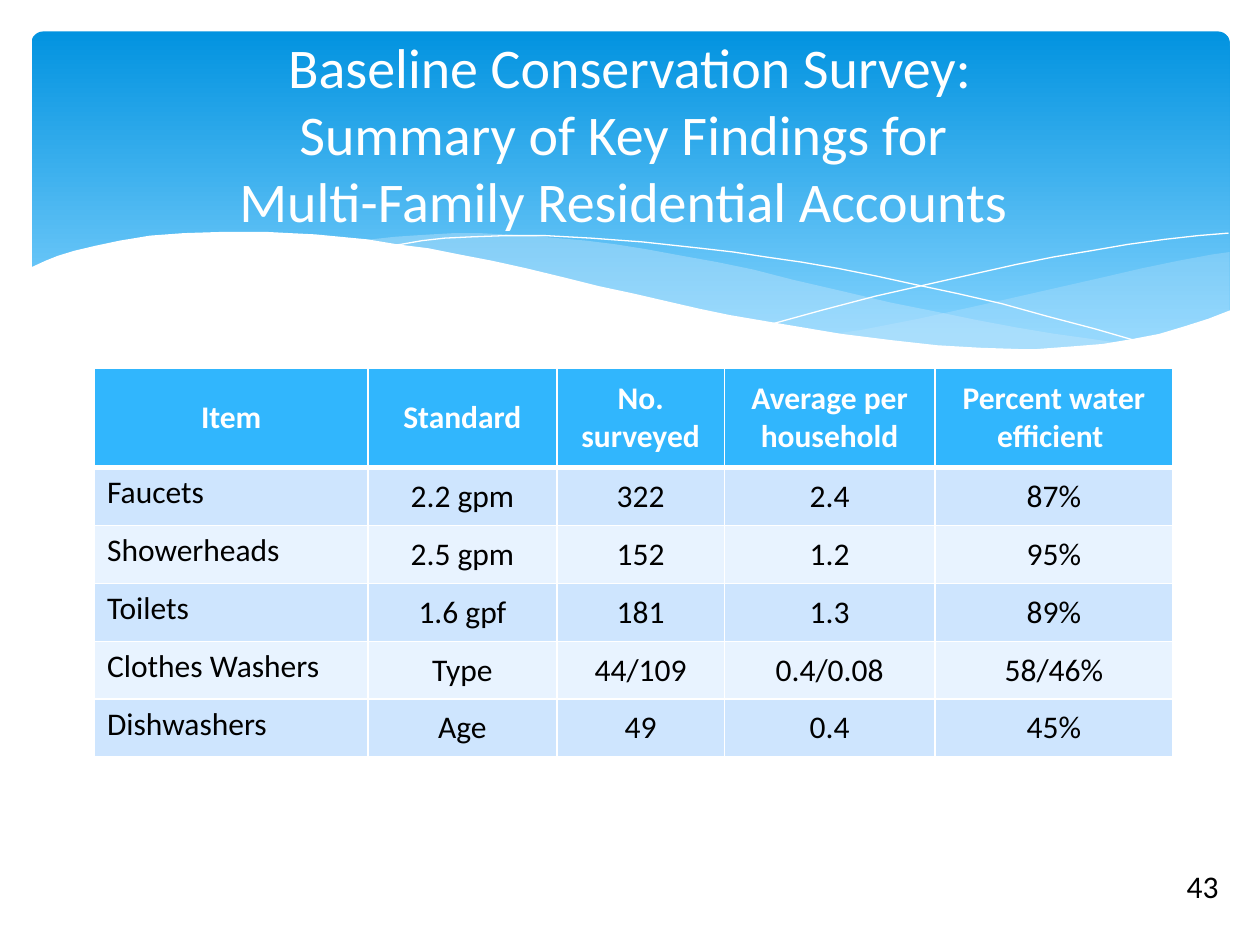
from lxml.etree import SubElement
from pptx import Presentation
from pptx.dml.color import RGBColor
from pptx.enum.shapes import MSO_SHAPE
from pptx.enum.text import MSO_ANCHOR, PP_ALIGN
from pptx.oxml.ns import qn
from pptx.util import Inches, Pt

COLORS = {
    "white": "FFFFFF", "black": "000000", "banner_top": "0293E0",
    "banner_bottom": "83D3FE", "wave": "C6E7FC", "header": "31B6FD",
    "odd_row": "CEE5FE", "even_row": "E8F3FF",
}


def rgb(name):
    return RGBColor.from_string(COLORS[name])


def style_text(frame, size, color, bold=False, align=PP_ALIGN.LEFT):
    for paragraph in frame.paragraphs:
        paragraph.alignment = align
        for run in paragraph.runs:
            run.font.name = "Calibri"
            run.font.size = Pt(size)
            run.font.bold = bold
            run.font.color.rgb = rgb(color)


prs = Presentation()
prs.slide_width, prs.slide_height = Inches(10), Inches(7.5)
slide = prs.slides.add_slide(prs.slide_layouts[6])
shapes = slide.shapes

# Banner with a vertical gradient
banner = shapes.add_shape(MSO_SHAPE.ROUNDED_RECTANGLE, Inches(0.25), Inches(0.25),
                          Inches(9.51), Inches(2.7))
banner.adjustments[0] = 0.034
banner.shadow.inherit = False
banner.line.fill.background()
banner.fill.gradient()
banner.fill.gradient_angle = 270
for stop, position, color in zip(banner.fill.gradient_stops, (0, 0.9),
                                 ("banner_top", "banner_bottom")):
    stop.position = position
    stop.color.rgb = rgb(color)

# Wave outlines, in inches
right_wave = [
    (9.76, 2), (9.62, 2.02), (9.35, 2.07), (9.06, 2.13), (8.76, 2.2), (8.32, 2.3),
    (7.79, 2.42), (7.29, 2.53), (6.83, 2.62), (6.61, 2.65), (6.91, 2.69), (7.19, 2.72),
    (7.45, 2.75), (7.69, 2.77), (8.03, 2.78), (8.35, 2.77), (8.63, 2.75), (8.89, 2.72),
    (9.13, 2.67), (9.35, 2.62), (9.49, 2.57), (9.63, 2.52), (9.76, 2.47)]
middle_wave = [
    (8.93, 2.73), (8.66, 2.69), (8.37, 2.65), (8.07, 2.6), (7.75, 2.54), (7.41, 2.47),
    (7.06, 2.4), (6.68, 2.31), (6.29, 2.22), (5.98, 2.14), (5.69, 2.08), (5.41, 2.03),
    (5.14, 1.98), (4.89, 1.94), (4.65, 1.91), (4.42, 1.89), (4.2, 1.87), (3.99, 1.86),
    (3.8, 1.85), (3.61, 1.85), (3.44, 1.86), (3.28, 1.87), (3.13, 1.88), (2.86, 1.91),
    (3.23, 1.96), (3.62, 2.03), (4.04, 2.11), (4.49, 2.22), (4.91, 2.32), (5.3, 2.4),
    (5.66, 2.48), (6.01, 2.55), (6.34, 2.61), (6.65, 2.66), (6.95, 2.7), (7.22, 2.74),
    (7.48, 2.76), (7.73, 2.77), (7.96, 2.78), (8.38, 2.78), (8.67, 2.76), (8.84, 2.74)]
falling_line = [
    (3.09, 1.95), (3.18, 1.94), (3.35, 1.91), (3.53, 1.89), (3.74, 1.88), (4.01, 1.87),
    (4.33, 1.87), (4.69, 1.89), (5.1, 1.92), (5.56, 1.97), (5.82, 2), (6.08, 2.04),
    (6.36, 2.08), (6.65, 2.13), (6.95, 2.19), (7.27, 2.26), (7.6, 2.33), (7.95, 2.41),
    (8.31, 2.51), (8.69, 2.61), (9.07, 2.72)]
rising_line = [
    (6.13, 2.57), (6.53, 2.46), (6.95, 2.35), (7.48, 2.23), (8.06, 2.1), (8.36, 2.04),
    (8.66, 1.99), (8.95, 1.94), (9.24, 1.9), (9.51, 1.87), (9.75, 1.85)]
front_wave = [
    (9.77, 2.46), (9.59, 2.53), (9.4, 2.59), (9.2, 2.65), (8.99, 2.69), (8.75, 2.73),
    (8.5, 2.75), (8.23, 2.77), (8.09, 2.77), (7.78, 2.76), (7.44, 2.74), (7.08, 2.7),
    (6.68, 2.65), (6.26, 2.58), (5.79, 2.5), (5.55, 2.45), (5.29, 2.39), (5.03, 2.33),
    (4.75, 2.27), (4.47, 2.2), (4.18, 2.13), (3.91, 2.07), (3.65, 2.02), (3.4, 1.97),
    (3.16, 1.94), (2.92, 1.9), (2.71, 1.88), (2.5, 1.86), (2.3, 1.85), (2.11, 1.84),
    (1.77, 1.84), (1.46, 1.85), (1.19, 1.87), (0.95, 1.91), (0.76, 1.95), (0.59, 1.99),
    (0.46, 2.03), (0.36, 2.07), (0.23, 2.13), (0.23, 3.29), (9.77, 3.29)]

# Filled waves carry an opacity in percent; the hairlines carry none
for points, color, opacity in (
        (right_wave, "wave", 29), (middle_wave, "wave", 40),
        (falling_line, "white", None), (rising_line, "white", None),
        (front_wave, "white", 100)):
    outline = [(Inches(x), Inches(y)) for x, y in points]
    builder = shapes.build_freeform(*outline[0])
    builder.add_line_segments(outline[1:], close=opacity is not None)
    curve = builder.convert_to_shape()
    curve.shadow.inherit = False
    if opacity is None:
        curve.fill.background()
        curve.line.color.rgb = rgb(color)
        curve.line.width = Pt(0)
        continue
    curve.line.fill.background()
    curve.fill.solid()
    curve.fill.fore_color.rgb = rgb(color)
    if opacity < 100:
        wave_color = curve.fill._xPr.find(".//" + qn("a:srgbClr"))
        SubElement(wave_color, qn("a:alpha"), val=str(opacity * 1000))

# Slide number
number = shapes.add_textbox(Inches(9.32), Inches(6.83), Inches(0.46), Inches(0.4))
number.text_frame.word_wrap = False
number.text_frame.text = "43"
style_text(number.text_frame, 18, "black")

# Survey findings
findings = [
    ("Item", "Standard", "No. surveyed", "Average per household", "Percent water efficient "),
    ("Faucets", "2.2 gpm", "322", "2.4", "87%"),
    ("Showerheads", "2.5 gpm", "152", "1.2", "95%"),
    ("Toilets", "1.6 gpf", "181", "1.3", "89%"),
    ("Clothes Washers", "Type", "44/109", "0.4/0.08", "58/46%"),
    ("Dishwashers", "Age", "49", "0.4", "45%"),
]
survey = shapes.add_table(len(findings), len(findings[0]), Inches(0.75), Inches(2.92),
                          Inches(8.56), Inches(3.08)).table
for column, width in zip(survey.columns, (2.17, 1.5, 1.33, 1.67, 1.89)):
    column.width = Inches(width)
for r, values in enumerate(findings):
    survey.rows[r].height = Inches(0.46 if r else 0.79)
    row_color = ("odd_row" if r % 2 else "even_row") if r else "header"
    for c, value in enumerate(values):
        cell = survey.cell(r, c)
        cell.text_frame.text = value
        is_item = r > 0 and c == 0
        cell.vertical_anchor = MSO_ANCHOR.TOP if is_item else MSO_ANCHOR.MIDDLE
        style_text(cell.text_frame, 18, "black" if r else "white", bold=r == 0,
                   align=PP_ALIGN.LEFT if is_item else PP_ALIGN.CENTER)
        # White borders, thicker under the header
        properties = cell._tc.get_or_add_tcPr()
        for side in ("L", "R", "T", "B"):
            under_header = (r, side) in ((0, "B"), (1, "T"))
            border = SubElement(properties, qn(f"a:ln{side}"), w=str(Pt(3 if under_header else 1)))
            border_fill = SubElement(border, qn("a:solidFill"))
            SubElement(border_fill, qn("a:srgbClr"), val=COLORS["white"])
        cell.fill.solid()
        cell.fill.fore_color.rgb = rgb(row_color)

# Title
title = shapes.add_textbox(Inches(0.5), Inches(0.37), Inches(9), Inches(1.37))
title.text_frame.word_wrap = True
title.text_frame.vertical_anchor = MSO_ANCHOR.MIDDLE
title.text_frame.paragraphs[0].text = (
    "Baseline Conservation Survey:\vSummary of Key Findings for \v"
    "Multi-Family Residential Accounts ")
style_text(title.text_frame, 32, "white", align=PP_ALIGN.CENTER)

prs.save("out.pptx")
